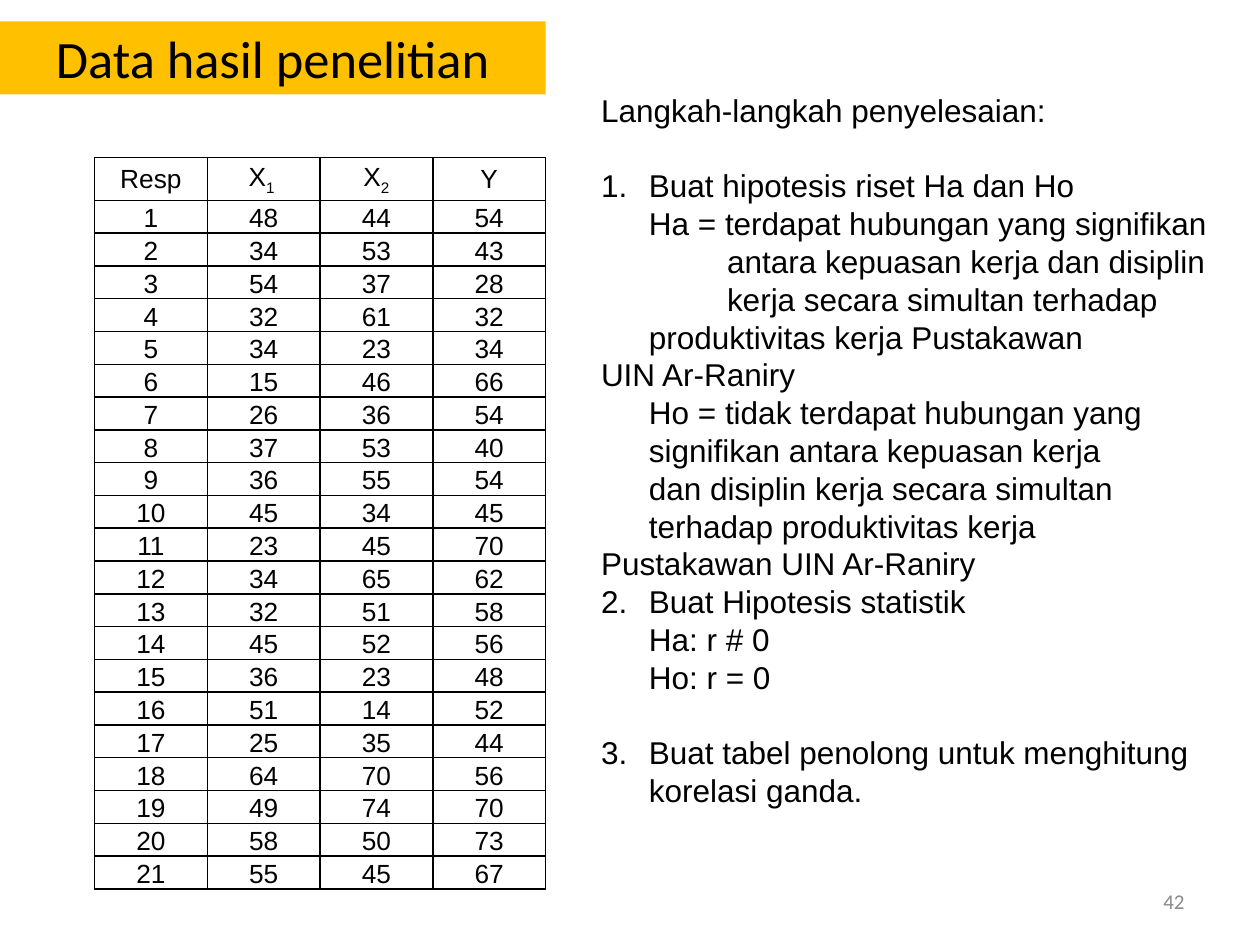
import pptx
import pptx.util
import pptx.dml.color
import pptx.enum.text
import pptx.oxml
import pptx.oxml.ns

Inches = pptx.util.Inches
Pt = pptx.util.Pt
Align = pptx.enum.text.PP_ALIGN
Anchor = pptx.enum.text.MSO_ANCHOR

COLORS = {"banner": "FFC000", "paper": "FFFFFF", "ink": "000000", "muted": "898989"}
WIDTH, HEIGHT = Inches(10), Inches(7.5)
HEADER = ["Resp", "X1 ", "X2", "Y"]
SCORES = [
    (48, 44, 54), (34, 53, 43), (54, 37, 28), (32, 61, 32), (34, 23, 34),
    (15, 46, 66), (26, 36, 54), (37, 53, 40), (36, 55, 54), (45, 34, 45),
    (23, 45, 70), (34, 65, 62), (32, 51, 58), (45, 52, 56), (36, 23, 48),
    (51, 14, 52), (25, 35, 44), (64, 70, 56), (49, 74, 70), (58, 50, 73),
    (55, 45, 67),
]
FLUSH, STEP, INSET, HANGING = (0, 0), (0.38, -0.38), (0.38, 0), (1, -0.62)
HA_TEXT = (
    "Ha = terdapat hubungan yang signifikan\v"
    "antara kepuasan kerja dan disiplin\v"
    "kerja secara simultan terhadap"
)
HO_TEXT = (
    "Ho = tidak terdapat hubungan yang\v"
    "signifikan antara kepuasan kerja\v"
    "dan disiplin kerja secara simultan\v"
    "terhadap produktivitas kerja"
)
STEPS = [
    ("Langkah-langkah penyelesaian:", FLUSH, None, False),
    ("Buat hipotesis riset Ha dan Ho", STEP, 1, True),
    (HA_TEXT, HANGING, None, False),
    ("produktivitas kerja Pustakawan", INSET, None, False),
    ("UIN Ar-Raniry", FLUSH, None, False),
    (HO_TEXT, INSET, None, False),
    ("Pustakawan UIN Ar-Raniry", FLUSH, None, False),
    ("Buat Hipotesis statistik", STEP, 2, False),
    ("Ha: r # 0", INSET, None, False),
    ("Ho: r = 0", INSET, None, False),
    ("Buat tabel penolong untuk menghitung korelasi ganda.", STEP, 3, True),
]


def inches(*lengths):
    return [Inches(length) for length in lengths]


def color(name):
    return pptx.dml.color.RGBColor.from_string(COLORS[name])


def element(markup):
    return pptx.oxml.parse_xml(
        markup.replace(" ", f" {pptx.oxml.ns.nsdecls('a')} ", 1))


def place(shape, box):
    shape.left, shape.top, shape.width, shape.height = box


def style(para, size, name="Arial", ink="ink", align=Align.LEFT):
    para.alignment = align
    para.font.size = Pt(size)
    para.font.name = name
    para.font.color.rgb = color(ink)


def add_title(page, box):
    title = page.shapes.title
    place(title, box)
    title.fill.solid()
    title.fill.fore_color.rgb = color("banner")
    frame = title.text_frame
    frame.text = "Data hasil penelitian"
    frame.vertical_anchor = Anchor.MIDDLE
    style(frame.paragraphs[0], 30, "Calibri", align=Align.CENTER)


def add_borders(cell):
    properties = cell._tc.get_or_add_tcPr()
    for position, side in enumerate("LRTB"):
        properties.insert(position, element(
            f'<a:ln{side} w="12700"><a:solidFill>'
            f'<a:srgbClr val="{COLORS["ink"]}"/></a:solidFill></a:ln{side}>'))


def fill_cell(cell, text, is_header):
    cell.fill.solid()
    cell.fill.fore_color.rgb = color("paper")
    add_borders(cell)
    cell.margin_left = cell.margin_right = cell.margin_top = Inches(0.01)
    cell.margin_bottom = 0
    cell.vertical_anchor = Anchor.MIDDLE if is_header else Anchor.BOTTOM
    para = cell.text_frame.paragraphs[0]
    style(para, 15, align=Align.CENTER)
    if text.startswith("X"):
        para.add_run().text = text[0]
        span = para.add_run()
        span.text = text[1:]
        span._r.get_or_add_rPr().set("baseline", "-25000")
    else:
        para.add_run().text = text


def add_scores(page, box):
    rows = [HEADER] + [(number, *scores) for number, scores in enumerate(SCORES, 1)]
    table = page.shapes.add_table(len(rows), len(HEADER), *box).table
    table.horz_banding = False
    header_height = Inches(0.34)
    for column in table.columns:
        column.width = box[2] // len(HEADER)
    for index, values in enumerate(rows):
        is_header = index == 0
        table.rows[index].height = (
            header_height if is_header else (box[3] - header_height) // len(SCORES))
        for cell, value in zip(table.rows[index].cells, values):
            fill_cell(cell, str(value), is_header)


def add_step(para, text, indents, number, gap):
    para.text = text
    para.space_before = Pt(21.6 if gap else 0)
    properties = para._p.get_or_add_pPr()
    for name, length in zip(("marL", "indent"), inches(*indents)):
        properties.set(name, str(length))
    if number:
        properties.append(element(
            f'<a:buAutoNum type="arabicPeriod" startAt="{number}"/>'))
    else:
        properties.append(element("<a:buNone />"))
    style(para, 18)


def add_steps(page, box):
    body = page.placeholders[1]
    place(body, box)
    frame = body.text_frame
    frame.word_wrap = True
    frame.auto_size = pptx.enum.text.MSO_AUTO_SIZE.NONE
    frame.vertical_anchor = Anchor.TOP
    frame.margin_right = Inches(0.05)
    for index, step in enumerate(STEPS):
        para = frame.add_paragraph() if index else frame.paragraphs[0]
        add_step(para, *step)


def add_page_number(page, box):
    frame = page.shapes.add_textbox(*box).text_frame
    frame.word_wrap = True
    frame.vertical_anchor = Anchor.MIDDLE
    frame.text = "42"
    style(frame.paragraphs[0], 12, "Calibri", "muted", Align.RIGHT)


def main():
    deck = pptx.Presentation()
    deck.slide_width, deck.slide_height = WIDTH, HEIGHT
    page = deck.slides.add_slide(deck.slide_layouts[1])
    add_title(page, inches(0, 0.17, 4.33, 0.58))
    add_page_number(page, inches(7.17, 6.95, 2.33, 0.4))
    add_scores(page, inches(0.75, 1.25, 3.58, 5.81))
    add_steps(page, inches(4.67, 0.67, 5, 5.86))
    deck.save("out.pptx")


if __name__ == "__main__":
    main()
